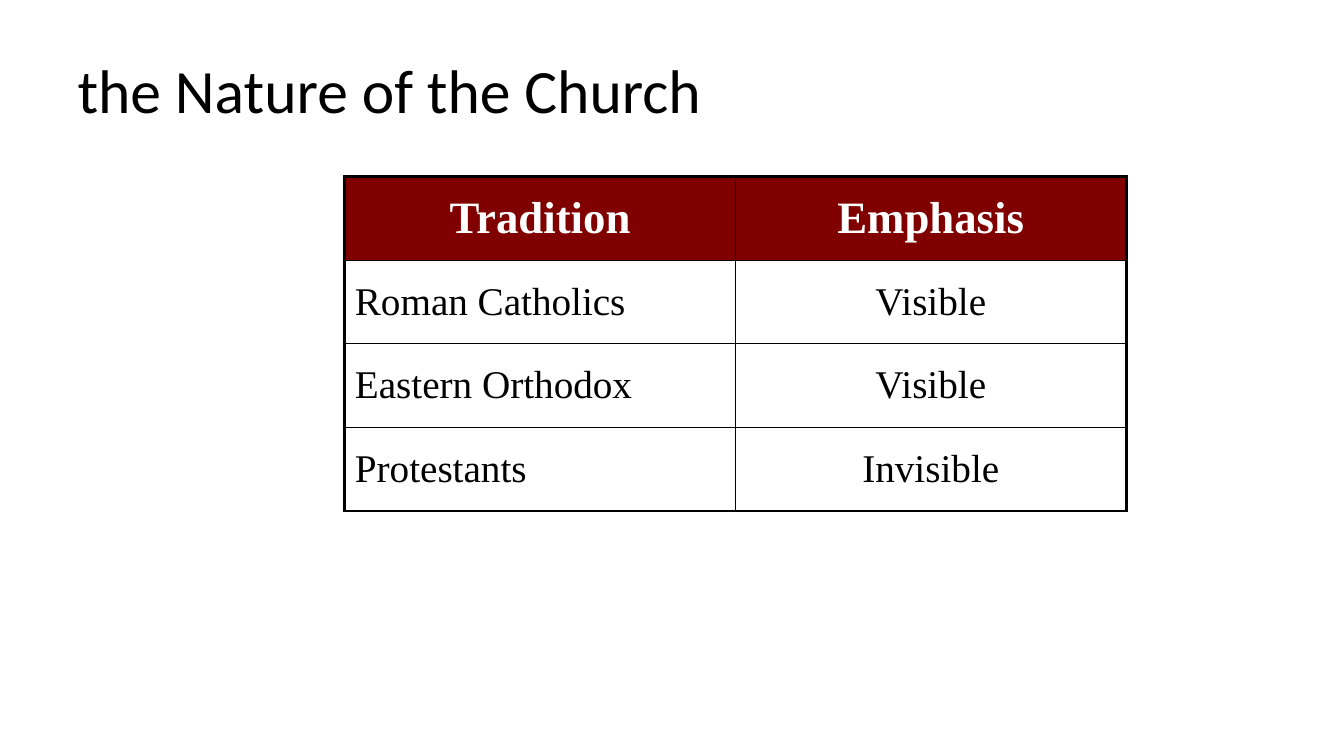
from lxml.etree import SubElement
from pptx import Presentation
from pptx.dml.color import RGBColor
from pptx.enum.text import MSO_ANCHOR, PP_ALIGN
from pptx.oxml.ns import qn
from pptx.util import Cm, Pt

BLACK = "000000"
WHITE = "FFFFFF"
MAROON = "800000"
OUTER_LINE = Pt(2.25)
INNER_LINE = Pt(1)
TRADITIONS = [
    ("Tradition", "Emphasis"),
    ("Roman Catholics", "Visible"),
    ("Eastern Orthodox", "Visible"),
    ("Protestants", "Invisible"),
]
TITLE_FORMAT = {"name": "Calibri", "size": Pt(44), "bold": False}
HEADER_FORMAT = {"name": "Times New Roman", "size": Pt(32), "bold": True}
BODY_FORMAT = {"name": "Times New Roman", "size": Pt(28), "bold": False}


def colour(value):
    return RGBColor.from_string(value)


def write_text(frame, text, values, hex_colour, alignment):
    para = frame.paragraphs[0]
    para.alignment = alignment
    span = para.add_run()
    span.text = text
    for name, value in values.items():
        setattr(span.font, name, value)
    span.font.color.rgb = colour(hex_colour)
    return para


def add_borders(cell, widths):
    properties = cell._tc.get_or_add_tcPr()
    for side, width in widths.items():
        line = SubElement(properties, qn(f"a:ln{side}"), w=str(width))
        fill = SubElement(line, qn("a:solidFill"))
        SubElement(fill, qn("a:srgbClr"), val=BLACK)


def format_title(page, left, top, width, height):
    title = page.shapes.title
    box = {"left": left, "top": top, "width": width, "height": height}
    for name, value in box.items():
        setattr(title, name, value)
    title.text_frame.vertical_anchor = MSO_ANCHOR.MIDDLE
    para = write_text(title.text_frame, "the Nature of the Church",
                      TITLE_FORMAT, BLACK, PP_ALIGN.LEFT)
    para.line_spacing = 0.9


def add_tradition_table(page, left, top, width, height):
    row_count, column_count = len(TRADITIONS), len(TRADITIONS[0])
    table = page.shapes.add_table(
        row_count, column_count, left, top, width, height).table
    table.horz_banding = False
    for row, texts in enumerate(TRADITIONS):
        header = row == 0
        for column, text in enumerate(texts):
            cell = table.cell(row, column)
            cell.vertical_anchor = MSO_ANCHOR.MIDDLE
            edges = {
                "L": column == 0,
                "R": column == column_count - 1,
                "T": header,
                "B": row == row_count - 1,
            }
            add_borders(cell, {side: OUTER_LINE if outer else INNER_LINE
                               for side, outer in edges.items()})
            if header:
                cell.fill.solid()
                cell.fill.fore_color.rgb = colour(MAROON)
            else:
                cell.fill.background()
            centred = header or column > 0
            write_text(cell.text_frame, text,
                       HEADER_FORMAT if header else BODY_FORMAT,
                       WHITE if header else BLACK,
                       PP_ALIGN.CENTER if centred else PP_ALIGN.LEFT)


def main():
    deck = Presentation()
    deck.slide_width = Cm(33.87)
    deck.slide_height = Cm(19.05)
    page = deck.slides.add_slide(deck.slide_layouts[5])
    format_title(page, Cm(1.7), Cm(0.76), Cm(30.48), Cm(3.18))
    add_tradition_table(page, Cm(8.69), Cm(4.45), Cm(19.69), Cm(8.43))
    deck.save("out.pptx")


if __name__ == "__main__":
    main()
